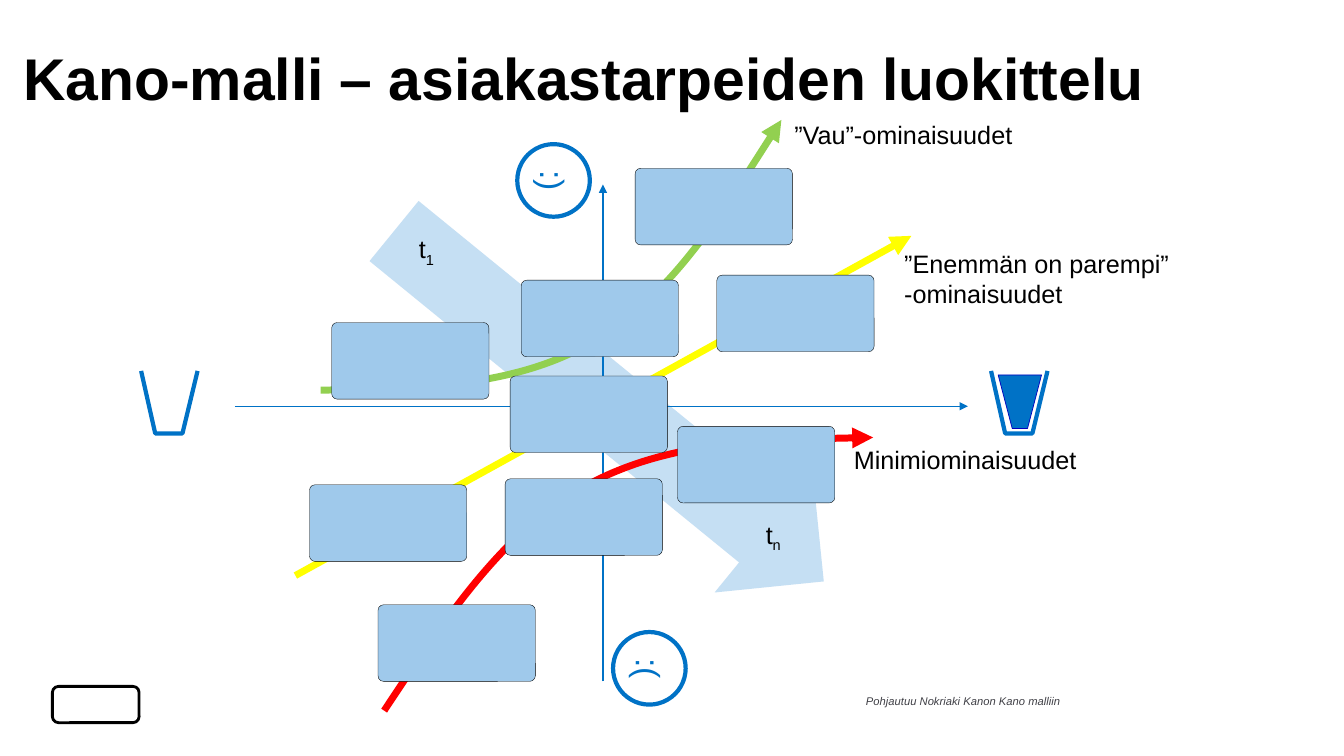
from lxml.etree import SubElement
from pptx import Presentation
from pptx.dml.color import RGBColor
from pptx.enum.shapes import MSO_CONNECTOR, MSO_SHAPE as SHAPE
from pptx.enum.text import MSO_ANCHOR as ANCHOR, MSO_AUTO_SIZE as AUTO, PP_ALIGN as ALIGN
from pptx.oxml.ns import qn
from pptx.util import Inches, Pt

BLUE, PALE, CARD = "0072C6", "C5DFF3", "9FC9EB"
GREEN, YELLOW, RED, BLACK, GREY = "92D050", "FFFF00", "FF0000", "000000", "404046"
CARD_W, CARD_H = 1.56, 0.76


def rgb(color):
    return RGBColor.from_string(color)


def style(sp, fill=None, line=None, width=1):
    sp.shadow.inherit = False
    if fill:
        sp.fill.solid()
        sp.fill.fore_color.rgb = rgb(fill)
    else:
        sp.fill.background()
    if line:
        sp.line.color.rgb = rgb(line)
        sp.line.width = Pt(width)
    else:
        sp.line.fill.background()


def add_shape(slide, kind, box, **look):
    sp = slide.shapes.add_shape(kind, *map(Inches, box))
    style(sp, **look)
    return sp


def add_run(p, text, size, color=BLACK, bold=False, italic=False, baseline=None):
    r = p.add_run()
    r.text = text
    font = r.font
    font.name, font.size, font.bold, font.italic = "Arial", Pt(size), bold, italic
    font.color.rgb = rgb(color)
    if baseline:
        font._element.set("baseline", str(baseline))


def add_text(slide, box, wrap=True, align=ALIGN.LEFT):
    """Add an empty text box and return its first paragraph."""
    tf = slide.shapes.add_textbox(*map(Inches, box)).text_frame
    tf.word_wrap = wrap
    tf.auto_size = AUTO.SHAPE_TO_FIT_TEXT
    p = tf.paragraphs[0]
    p.alignment = align
    return p


def add_arrowhead(sp):
    SubElement(sp.line._get_or_add_ln(), qn("a:tailEnd"), type="triangle")


def add_arrow(slide, start, end, color, width):
    points = map(Inches, (*start, *end))
    line = slide.shapes.add_connector(MSO_CONNECTOR.STRAIGHT, *points)
    line.line.color.rgb = rgb(color)
    line.line.width = Pt(width)
    SubElement(line._element.spPr, qn("a:effectLst"))
    add_arrowhead(line)


def add_outline(slide, points, color, width):
    """Draw an open polyline through points given in inches."""
    (x, y), *rest = [(Inches(px), Inches(py)) for px, py in points]
    builder = slide.shapes.build_freeform(x, y)
    builder.add_line_segments(rest, close=False)
    sp = builder.convert_to_shape()
    style(sp, line=color, width=width)
    return sp


def add_curve(slide, points, color, width):
    """Draw Bezier segments: a start point, then three points for each segment."""
    sp = add_outline(slide, points, color, width)
    outline = next(sp._element.iter(qn("a:path")))
    steps = outline.findall(qn("a:lnTo"))
    for i in range(0, len(steps), 3):
        cubic = SubElement(outline, qn("a:cubicBezTo"))
        for step in steps[i:i + 3]:
            cubic.append(step[0])
            outline.remove(step)
    add_arrowhead(sp)


def add_title(slide, box, text):
    title = slide.shapes.title
    title.left, title.top, title.width, title.height = map(Inches, box)
    tf = title.text_frame
    tf.margin_left = tf.margin_right = tf.margin_top = tf.margin_bottom = 0
    tf.vertical_anchor = ANCHOR.MIDDLE
    tf.word_wrap = True
    tf.auto_size = AUTO.NONE
    p = tf.paragraphs[0]
    p.alignment = ALIGN.LEFT
    p.line_spacing = 0.9
    add_run(p, text, 42, bold=True)


def add_time_arrow(slide, box):
    arrow = add_shape(slide, SHAPE.DOWN_ARROW, box, fill=PALE)
    arrow.rotation = 309.2


def add_face(slide, left, top, mouth):
    face = add_shape(slide, SHAPE.OVAL, (left, top, 0.72, 0.72), line=BLUE, width=3)
    face.rotation = 90
    tf = face.text_frame
    tf.vertical_anchor = ANCHOR.MIDDLE
    p = tf.paragraphs[0]
    p.alignment = ALIGN.CENTER
    add_run(p, ":" + mouth, 24, BLUE)


def add_glass(slide, left, top, full=False):
    corners = [(0, 0), (0.14, 0.62), (0.41, 0.62), (0.56, 0)]
    add_outline(slide, [(left + dx, top + dy) for dx, dy in corners], BLUE, 3)
    if full:
        water = add_shape(slide, SHAPE.TRAPEZOID, (left + 0.07, top + 0.04, 0.43, 0.53),
                          fill=BLUE, line="0000BF", width=0.5)
        water.rotation = 180
        water.adjustments[0] = 0.323


def add_axes(slide, box):
    left, top, width, height = box
    x, y = 5.98, 4.03
    add_arrow(slide, (left, y), (left + width, y), BLUE, 1)
    add_arrow(slide, (x, top + height), (x, top), BLUE, 1)


def add_feature_curves(slide, left, top):
    def place(*points):
        return [(left + dx, top + dy) for dx, dy in points]

    add_curve(slide, place((0.88, 5.86), (1.47, 4.97), (2.05, 4.09), (2.86, 3.64),
                           (3.67, 3.19), (4.7, 3.17), (5.73, 3.15)), RED, 5)
    add_curve(slide, place((0.25, 2.68), (1.22, 2.67), (2.19, 2.65), (2.95, 2.2),
                           (3.71, 1.76), (4.26, 0.88), (4.82, 0)), GREEN, 5)
    add_arrow(slide, *place((0, 4.52), (6.11, 1.15)), YELLOW, 5)


def add_time_label(slide, box, index, wrap):
    p = add_text(slide, box, wrap, ALIGN.CENTER)
    add_run(p, "t", 18)
    add_run(p, index, 18, baseline=-25000)


def add_card(slide, left, top):
    card = add_shape(slide, SHAPE.ROUNDED_RECTANGLE, (left, top, CARD_W, CARD_H),
                     fill=CARD, line=BLACK, width=0.25)
    card.adjustments[0] = 0.071


def main():
    prs = Presentation()
    prs.slide_width, prs.slide_height = Inches(13.33), Inches(7.5)
    slide = prs.slides.add_slide(prs.slide_layouts[5])

    add_title(slide, (0.23, 0.45, 13.1, 0.72), "Kano-malli – asiakastarpeiden luokittelu")
    add_shape(slide, SHAPE.ROUNDED_RECTANGLE, (0.52, 6.81, 0.86, 0.36), line=BLACK, width=2)

    add_time_arrow(slide, (5.27, 1.28, 1.54, 5.5))
    add_face(slide, 6.08, 6.27, "(")
    add_face(slide, 5.13, 1.43, ")")
    add_axes(slide, (2.33, 1.83, 7.27, 4.93))
    add_glass(slide, 1.4, 3.68)
    add_glass(slide, 9.83, 3.68, full=True)
    add_feature_curves(slide, 2.93, 1.19)
    add_time_label(slide, (4.05, 2.27, 0.36, 0.4), "1", wrap=False)
    add_time_label(slide, (7.36, 5.1, 0.62, 0.4), "n", wrap=True)

    for left, top in [(3.29, 3.2), (3.07, 4.81), (3.75, 6), (5.01, 4.75), (6.72, 4.23),
                      (5.06, 3.73), (7.11, 2.73), (5.17, 2.78), (6.3, 1.67)]:
        add_card(slide, left, top)

    for box, label in [((8.87, 2.41, 4.24, 0.71), "”Enemmän on parempi” -ominaisuudet"),
                       ((8.37, 4.36, 3.44, 0.4), "Minimiominaisuudet"),
                       ((7.78, 1.13, 4.24, 0.4), "”Vau”-ominaisuudet")]:
        add_run(add_text(slide, box), label, 18)
    source = add_text(slide, (8.49, 6.84, 2.15, 0.24), wrap=False)
    add_run(source, "Pohjautuu Nokriaki Kanon Kano malliin", 8, GREY, italic=True)

    prs.save("out.pptx")


if __name__ == "__main__":
    main()
